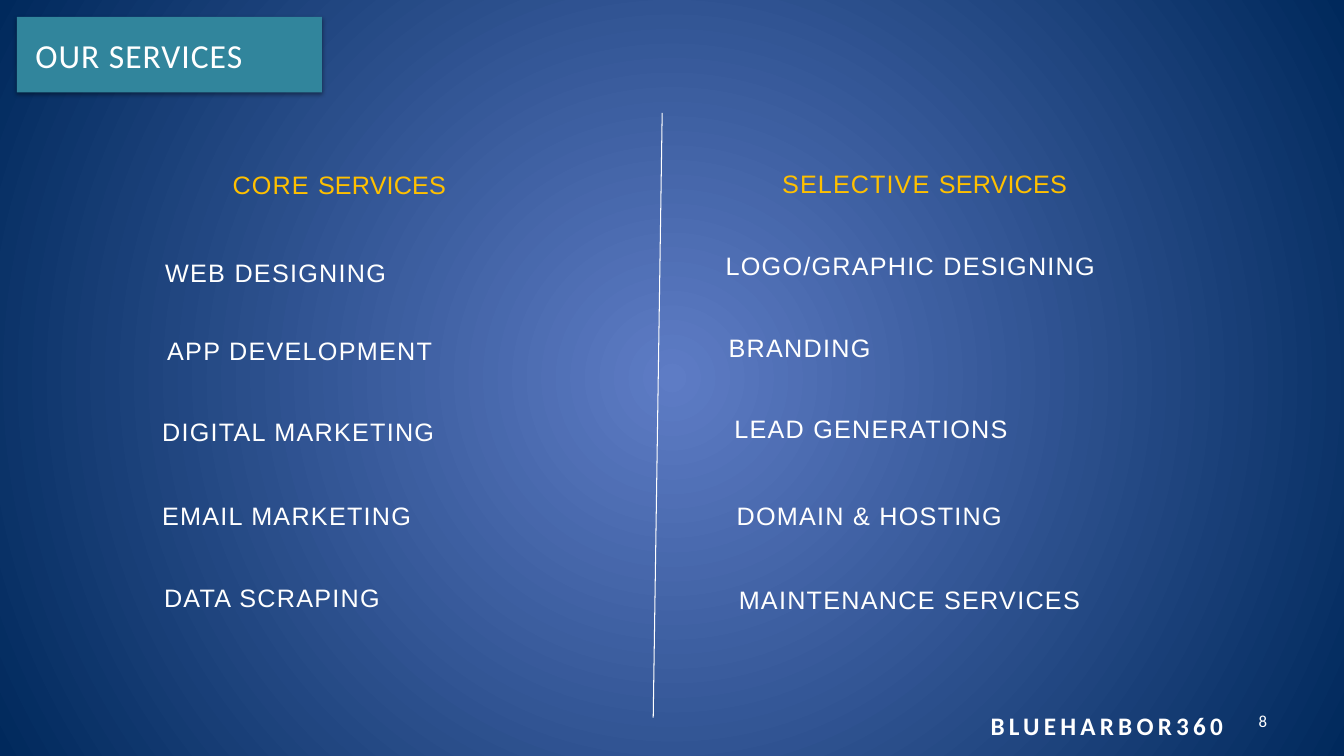
from dataclasses import dataclass
from typing import Any

from pptx import Presentation
from pptx import util as u
from pptx.dml import color as col
from pptx.enum import shapes, text
from pptx.oxml import parse_xml
from pptx.oxml import ns

Pt = u.Pt


@dataclass(frozen=True)
class Theme:
    white: str = "FFFFFF"
    gold: str = "FFC000"
    teal: str = "31859C"
    glow: str = "5E7CC5"
    navy: str = "00295C"
    black: str = "000000"
    sans: str = "Arial"
    brand: str = "Calibri"
    large: float = 24
    body: float = 18
    small: float = 12


@dataclass(frozen=True)
class Span:
    words: str
    space: float = 0.9


@dataclass(frozen=True)
class Label:
    left: float
    top: float
    width: float
    spans: tuple[Span, ...]
    color: str
    font: str
    size: float
    bold: bool = False
    before: float = 0
    align: Any = text.PP_ALIGN.LEFT
    anchor: Any = text.MSO_ANCHOR.TOP
    fit: Any = text.MSO_AUTO_SIZE.SHAPE_TO_FIT_TEXT


T = Theme()
HIGH = 29


def apply(target: Any, values: dict[str, Any]) -> None:
    for name, value in values.items():
        setattr(target, name, value)


def write(shape: Any, label: Label) -> None:
    frame = shape.text_frame
    apply(frame, {"word_wrap": True, "auto_size": label.fit,
                  "vertical_anchor": label.anchor})
    para = frame.paragraphs[0]
    apply(para, {"alignment": label.align, "space_before": Pt(label.before)})
    for span in label.spans:
        run = para.add_run()
        run.text = span.words
        apply(run.font, {"name": label.font, "size": Pt(label.size), "bold": label.bold})
        run.font.color.rgb = col.RGBColor.from_string(label.color)
        run._r.get_or_add_rPr().set("spc", str(round(span.space * 100)))


def add_label(slide: Any, label: Label) -> None:
    box = slide.shapes.add_textbox(Pt(label.left), Pt(label.top), Pt(label.width), Pt(HIGH))
    write(box, label)


def add_back(slide: Any) -> None:
    slide._element.cSld.insert(0, parse_xml(
        f'<p:bg {ns.nsdecls("p", "a")}><p:bgPr><a:gradFill rotWithShape="1"><a:gsLst>'
        f'<a:gs pos="0"><a:srgbClr val="{T.glow}"/></a:gs>'
        f'<a:gs pos="100000"><a:srgbClr val="{T.navy}"/></a:gs></a:gsLst>'
        '<a:path path="circle"><a:fillToRect l="50000" t="50000" r="50000" b="50000"/>'
        '</a:path></a:gradFill><a:effectLst/></p:bgPr></p:bg>'))


def add_title(slide: Any) -> None:
    box = slide.shapes.add_shape(shapes.MSO_SHAPE.RECTANGLE, Pt(12), Pt(12), Pt(218), Pt(54))
    box.fill.solid()
    box.fill.fore_color.rgb = col.RGBColor.from_string(T.teal)
    box.line.fill.background()
    box.shadow.inherit = False
    blur, drop = Pt(3.1), Pt(1.6)
    glow = box._element.spPr.find(ns.qn("a:effectLst"))
    glow.append(parse_xml(
        f'<a:outerShdw {ns.nsdecls("a")} blurRad="{blur}" dist="{drop}" dir="5400000" '
        f'rotWithShape="0"><a:srgbClr val="{T.black}"><a:alpha val="38000"/>'
        '</a:srgbClr></a:outerShdw>'))
    write(box, Label(0, 0, 0, (Span("OUR SERVICES", 0.7),), T.white, T.brand, T.large,
                     anchor=text.MSO_ANCHOR.MIDDLE, fit=text.MSO_AUTO_SIZE.NONE))
    box.text_frame.margin_left = Pt(13.3)


def add_rule(slide: Any) -> None:
    rule = slide.shapes.add_connector(
        shapes.MSO_CONNECTOR.STRAIGHT, Pt(473), Pt(80.6), Pt(466.6), Pt(512.6))
    rule.line.color.rgb = col.RGBColor.from_string(T.white)
    rule.line.width = Pt(0.75)
    rule._element.spPr.append(parse_xml(f'<a:effectLst {ns.nsdecls("a")}/>'))


def head(left: float, top: float, word: str) -> Label:
    spans = (Span(word + " ", 0.8), Span("SERVICES", 0.1))
    return Label(left, top, 250, spans, T.gold, T.sans, T.body, before=1)


def item(left: float, top: float, words: str) -> Label:
    return Label(left, top, 290, (Span(words),), T.white, T.sans, T.body)


LABELS = [
    head(159.1, 117.4, "CORE"),
    item(110.9, 180, "WEB DESIGNING"),
    item(112.3, 236.2, "APP DEVELOPMENT"),
    item(108.7, 293.8, "DIGITAL MARKETING"),
    item(108.7, 353.5, "EMAIL MARKETING"),
    item(110.1, 412.6, "DATA SCRAPING"),
    head(551.6, 116.6, "SELECTIVE"),
    item(511.2, 175, "LOGO/GRAPHIC DESIGNING"),
    item(513.4, 234, "BRANDING"),
    item(517.4, 291.6, "LEAD GENERATIONS"),
    item(519.1, 353.5, "DOMAIN & HOSTING"),
    item(520.6, 414, "MAINTENANCE SERVICES"),
    Label(700.6, 504, 185, (Span("BLUEHARBOR360", 3),), T.white, T.brand, T.body, bold=True),
    Label(688.3, 500.4, 224, (Span("8", 0),), T.white, T.brand, T.small,
          align=text.PP_ALIGN.RIGHT, anchor=text.MSO_ANCHOR.MIDDLE,
          fit=text.MSO_AUTO_SIZE.NONE),
]


def main() -> None:
    deck = Presentation()
    apply(deck, {"slide_width": Pt(960), "slide_height": Pt(540)})
    slide = deck.slides.add_slide(deck.slide_layouts[6])
    add_back(slide)
    add_title(slide)
    add_rule(slide)
    for label in LABELS:
        add_label(slide, label)
    deck.save("out.pptx")


if __name__ == "__main__":
    main()
